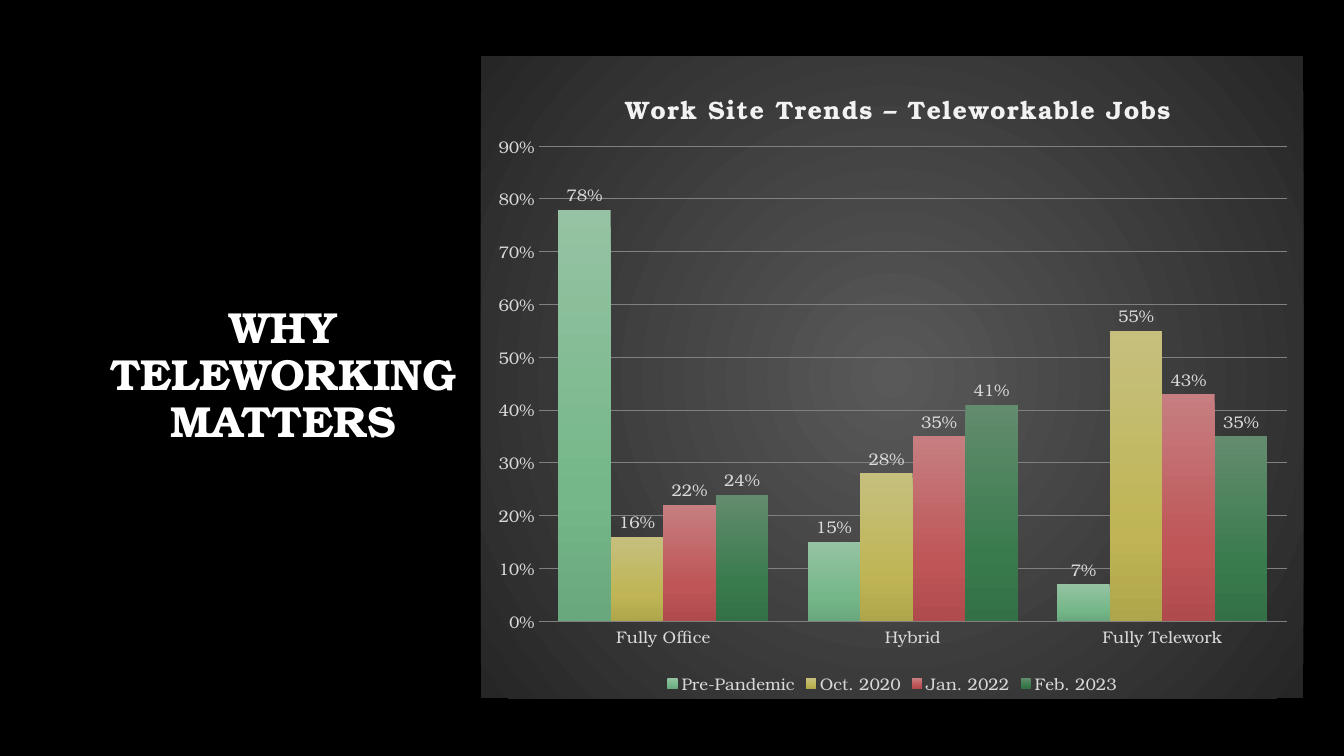
from dataclasses import dataclass

from lxml import etree
from pptx import Presentation
from pptx import util as u
from pptx.chart.chart import Chart
from pptx.chart.data import CategoryChartData
from pptx.dml.color import RGBColor
from pptx.enum import chart as chart_enum
from pptx.enum import text
from pptx.oxml import parse_xml
from pptx.oxml.ns import nsdecls, qn
from pptx.slide import Slide
from pptx.text.text import Font

FONT_NAME = "TeX Gyre Bonum"
BLACK = RGBColor(0x00, 0x00, 0x00)
WHITE = RGBColor(0xFF, 0xFF, 0xFF)
OFF_WHITE = RGBColor(0xF2, 0xF2, 0xF2)
LIGHT_GRAY = RGBColor(0xD9, 0xD9, 0xD9)
GRID_GRAY = RGBColor(0x80, 0x80, 0x80)
PANEL_CENTER = RGBColor(0x59, 0x59, 0x59)
PANEL_EDGE = RGBColor(0x26, 0x26, 0x26)

LINEAR_DOWN = '<a:lin ang="5400000" scaled="0"/>'
FROM_CENTER = (
    '<a:path path="circle">'
    '<a:fillToRect l="50000" t="50000" r="50000" b="50000"/></a:path>'
)


@dataclass(frozen=True)
class Survey:
    name: str
    shares: tuple[float, ...]
    colors: tuple[RGBColor, RGBColor, RGBColor]  # top, middle, bottom


CATEGORIES = ("Fully Office", "Hybrid", "Fully Telework")
SURVEYS = (
    Survey("Pre-Pandemic", (0.78, 0.15, 0.07),
           (RGBColor(0x95, 0xC3, 0xA3), RGBColor(0x75, 0xB7, 0x89), RGBColor(0x69, 0xA8, 0x7C))),
    Survey("Oct. 2020", (0.16, 0.28, 0.55),
           (RGBColor(0xC6, 0xBF, 0x7E), RGBColor(0xBF, 0xB5, 0x55), RGBColor(0xAF, 0xA6, 0x4B))),
    Survey("Jan. 2022", (0.22, 0.35, 0.43),
           (RGBColor(0xC6, 0x7E, 0x80), RGBColor(0xBF, 0x55, 0x57), RGBColor(0xAF, 0x4B, 0x4D))),
    Survey("Feb. 2023", (0.24, 0.41, 0.35),
           (RGBColor(0x63, 0x8C, 0x6E), RGBColor(0x39, 0x7B, 0x4D), RGBColor(0x33, 0x70, 0x46))),
)


def style_font(font: Font, size: float, color: RGBColor, bold: bool = False) -> None:
    font.name = FONT_NAME
    font.size = u.Pt(size)
    font.bold = bold
    font.color.rgb = color


def gradient_fill(stops: dict[int, RGBColor], direction: str) -> etree._Element:
    """Return a gradient fill; stops map a percentage to its colour."""
    stop_xml = "".join(
        f'<a:gs pos="{percent * 1000}"><a:srgbClr val="{color}"/></a:gs>'
        for percent, color in stops.items()
    )
    return parse_xml(
        f'<a:gradFill {nsdecls("a")} rotWithShape="1">'
        f"<a:gsLst>{stop_xml}</a:gsLst>{direction}</a:gradFill>"
    )


def manual_layout(target: str = "", **fractions: float) -> etree._Element:
    """Return a chart layout placed by fractions of the chart area."""
    target_xml = f'<c:layoutTarget val="{target}"/>' if target else ""
    modes = '<c:xMode val="edge"/><c:yMode val="edge"/>'
    values = "".join(f'<c:{key} val="{value}"/>' for key, value in fractions.items())
    return parse_xml(
        f'<c:layout {nsdecls("c")}><c:manualLayout>'
        f"{target_xml}{modes}{values}</c:manualLayout></c:layout>"
    )


def set_layout(element: etree._Element, layout: etree._Element, index: int) -> None:
    current = element.find(qn("c:layout"))
    if current is not None:
        element.remove(current)
    element.insert(index, layout)


def add_title(slide: Slide) -> None:
    title = slide.shapes.title
    title.left, title.top = u.Cm(2.08), u.Cm(1.7)
    title.width, title.height = u.Cm(10.11), u.Cm(15.57)
    frame = title.text_frame
    frame.text = "WHY TELEWORKING MATTERS"
    frame.word_wrap = True
    frame.auto_size = text.MSO_AUTO_SIZE.NONE
    frame.vertical_anchor = text.MSO_ANCHOR.MIDDLE
    paragraph = frame.paragraphs[0]
    paragraph.alignment = text.PP_ALIGN.CENTER
    paragraph.line_spacing = 0.9
    style_font(paragraph.runs[0].font, 31, WHITE, bold=True)


def add_trend_chart(slide: Slide) -> Chart:
    data = CategoryChartData(number_format="0%")
    data.categories = CATEGORIES
    for survey in SURVEYS:
        data.add_series(survey.name, survey.shares)
    chart = slide.shapes.add_chart(
        chart_enum.XL_CHART_TYPE.COLUMN_CLUSTERED,
        u.Cm(12.12), u.Cm(1.42), u.Cm(20.73), u.Cm(16.18), data,
    ).chart
    style_font(chart.font, 10, WHITE)
    return chart


def style_columns(chart: Chart) -> None:
    plot = chart.plots[0]
    plot.gap_width = 75
    plot.overlap = 0
    plot.vary_by_categories = False
    for series, survey in zip(plot.series, SURVEYS):
        properties = series._element.get_or_add_spPr()
        properties.append(gradient_fill(dict(zip((0, 69, 100), survey.colors)), LINEAR_DOWN))
        labels = series.data_labels
        labels.show_value = True
        labels.number_format = "0%"
        labels.number_format_is_linked = False
        labels.position = chart_enum.XL_LABEL_POSITION.OUTSIDE_END
        style_font(labels.font, 12, LIGHT_GRAY)


def style_axes(chart: Chart) -> None:
    for axis in (chart.category_axis, chart.value_axis):
        axis.major_tick_mark = chart_enum.XL_TICK_MARK.NONE
        axis.minor_tick_mark = chart_enum.XL_TICK_MARK.NONE
        axis.format.line.fill.background()
        style_font(axis.tick_labels.font, 12, LIGHT_GRAY)
    value_axis = chart.value_axis
    value_axis.minimum_scale, value_axis.maximum_scale = 0, 0.9
    value_axis.major_unit = 0.1
    value_axis.tick_labels.number_format = "0%"
    value_axis.tick_labels.number_format_is_linked = False
    value_axis.has_major_gridlines = True
    grid_line = value_axis.major_gridlines.format.line
    grid_line.color.rgb = GRID_GRAY
    grid_line.width = u.Pt(0.75)


def style_surroundings(chart: Chart) -> None:
    # Chart title with wide letter spacing
    chart.has_title = True
    frame = chart.chart_title.text_frame
    frame.text = "Work Site Trends – Teleworkable Jobs"
    title_font = frame.paragraphs[0].runs[0].font
    style_font(title_font, 18, OFF_WHITE, bold=True)
    title_font._element.set("spc", "100")
    chart.chart_title.include_in_layout = False
    title_element = chart.element.find(f'{qn("c:chart")}/{qn("c:title")}')
    set_layout(title_element, manual_layout(x=0.17, y=0.04), 1)

    # Legend
    chart.has_legend = True
    chart.legend.position = chart_enum.XL_LEGEND_POSITION.BOTTOM
    chart.legend.include_in_layout = False
    style_font(chart.legend.font, 12, LIGHT_GRAY)

    # Plot area and glowing panel
    plot_area = chart.element.find(f'{qn("c:chart")}/{qn("c:plotArea")}')
    set_layout(plot_area, manual_layout("inner", x=0.07, y=0.14, w=0.91, h=0.74), 0)
    panel = parse_xml(f'<c:spPr {nsdecls("c", "a")}><a:ln><a:noFill/></a:ln></c:spPr>')
    panel.insert(0, gradient_fill({0: PANEL_CENTER, 100: PANEL_EDGE}, FROM_CENTER))
    chart.element.find(qn("c:txPr")).addprevious(panel)


def main() -> None:
    presentation = Presentation()
    presentation.slide_width, presentation.slide_height = u.Cm(33.87), u.Cm(19.05)
    slide = presentation.slides.add_slide(presentation.slide_layouts[5])
    slide.background.fill.solid()
    slide.background.fill.fore_color.rgb = BLACK

    add_title(slide)
    chart = add_trend_chart(slide)
    style_columns(chart)
    style_axes(chart)
    style_surroundings(chart)
    presentation.save("out.pptx")


if __name__ == "__main__":
    main()
